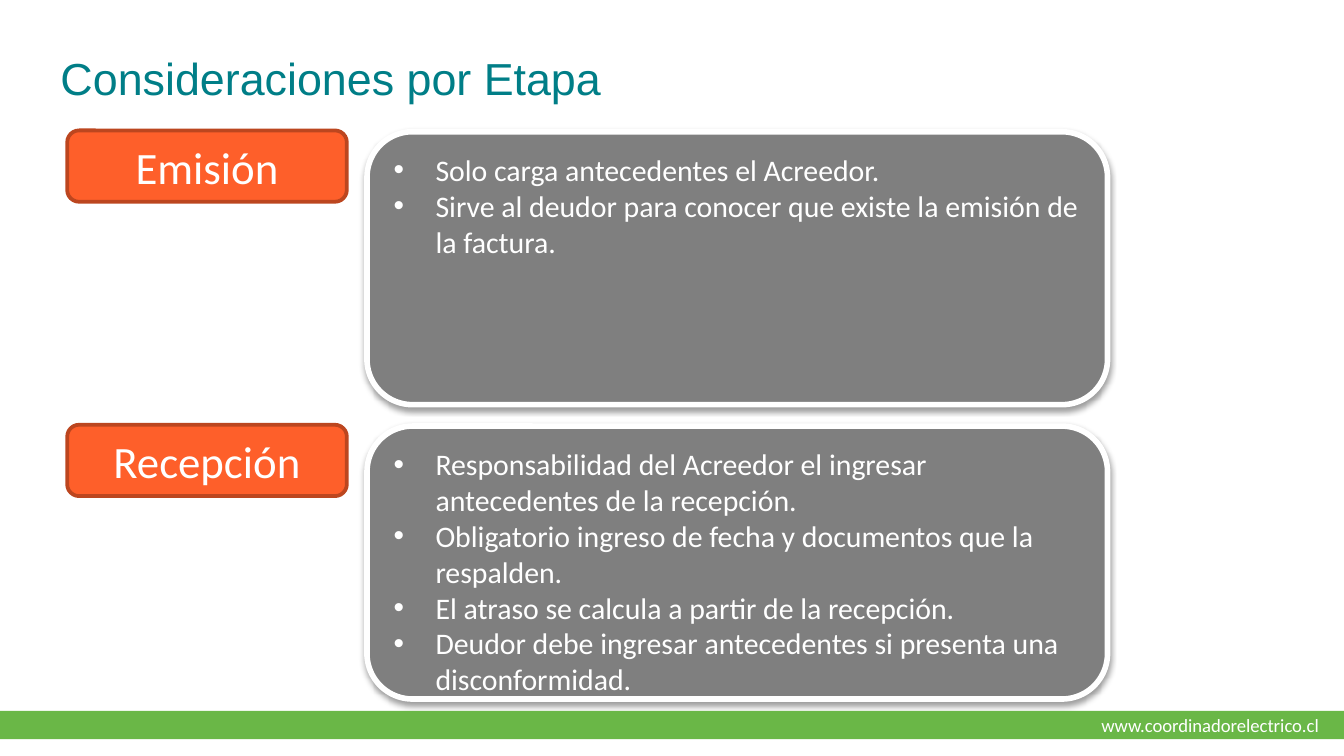
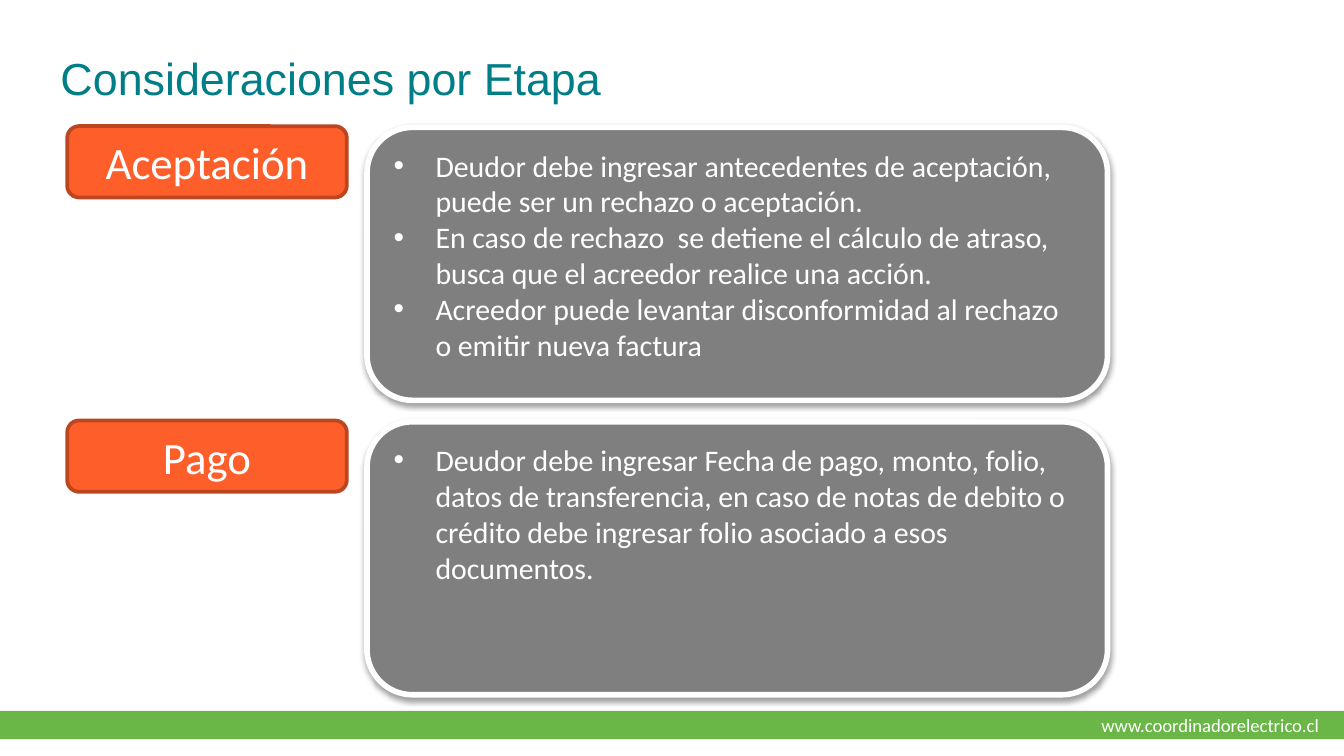
from dataclasses import dataclass

from lxml import etree
from pptx import Presentation
from pptx.dml.color import RGBColor
from pptx.enum.shapes import MSO_SHAPE
from pptx.enum.text import MSO_ANCHOR, PP_ALIGN
from pptx.oxml.ns import qn
from pptx.util import Pt

RECT, ROUNDED = MSO_SHAPE.RECTANGLE, MSO_SHAPE.ROUNDED_RECTANGLE
TOP, MIDDLE = MSO_ANCHOR.TOP, MSO_ANCHOR.MIDDLE
LEFT, CENTER, RIGHT = PP_ALIGN.LEFT, PP_ALIGN.CENTER, PP_ALIGN.RIGHT

# Content
TITLE = "Consideraciones por Etapa"
WEBSITE = "www.coordinadorelectrico.cl"
SLIDES = [
    {"top": 69.9, "stages": [
        ("Emisión", [
            "Solo carga antecedentes el Acreedor.",
            "Sirve al deudor para conocer que existe la emisión de la factura.",
        ]),
        ("Recepción", [
            "Responsabilidad del Acreedor el ingresar antecedentes de la recepción.",
            "Obligatorio ingreso de fecha y documentos que la respalden.",
            "El atraso se calcula a partir de la recepción.",
            "Deudor debe ingresar antecedentes si presenta una disconformidad.",
        ]),
    ]},
    {"top": 67.6, "stages": [
        ("Aceptación", [
            "Deudor debe ingresar antecedentes de aceptación, puede ser un rechazo o aceptación.",
            "En caso de rechazo  se detiene el cálculo de atraso, busca que el acreedor realice una acción.",
            "Acreedor puede levantar disconformidad al rechazo o emitir nueva factura",
        ]),
        ("Pago", [
            "Deudor debe ingresar Fecha de pago, monto, folio, datos de transferencia, "
            "en caso de notas de debito o crédito debe ingresar folio asociado a esos documentos.",
        ]),
    ]},
]


# Theme
@dataclass(frozen=True)
class Theme:
    teal: str = "007E87"
    green: str = "6AB747"
    orange: str = "FE5F2A"
    rust: str = "BC461F"
    gray: str = "7F7F7F"
    white: str = "FFFFFF"
    heading_font: str = "Arial"
    body_font: str = "Calibri"
    heading_size: int = 24
    list_size: int = 16
    footer_size: int = 10


THEME = Theme()

# Layout, in points
SLIDE_WIDTH, SLIDE_HEIGHT = 720, 405
TITLE_BOX = (25.2, 23.8, 668.9, 48.2)
BAND_BOX = (0, 380.9, SLIDE_WIDTH, 15.1)
WEBSITE_BOX = (567.4, 378.7, 146.2, 19.4)
LABEL_LEFT, LABEL_WIDTH, LABEL_HEIGHT = 36, 149.8, 38.2
PANEL_LEFT, PANEL_WIDTH, PANEL_HEIGHT = 196.6, 396.7, 146.2
PANEL_DROP = 0.7
STAGE_PITCH = 157.7
BULLET_INDENT = 22.5


def points(box):
    return [Pt(length) for length in box]


def write(shape, lines, size, color=THEME.white, font=THEME.body_font,
          align=LEFT, anchor=MIDDLE, bulleted=False):
    frame = shape.text_frame
    frame.word_wrap = True
    frame.vertical_anchor = anchor
    frame.text = "\n".join(lines)
    for paragraph in frame.paragraphs:
        paragraph.alignment = align
        if bulleted:
            add_bullet(paragraph)
        paragraph.font.name = font
        paragraph.font.size = Pt(size)
        paragraph.font.color.rgb = RGBColor.from_string(color)


def add_bullet(paragraph):
    properties = paragraph._p.get_or_add_pPr()
    properties.set("marL", str(Pt(BULLET_INDENT)))
    properties.set("indent", str(-Pt(BULLET_INDENT)))
    etree.SubElement(properties, qn("a:buFont"), typeface="Arial")
    etree.SubElement(properties, qn("a:buChar"), char="•")


def add_block(slide, kind, box, fill, line=None, line_width=0):
    block = slide.shapes.add_shape(kind, *points(box))
    block.shadow.inherit = False
    block.fill.solid()
    block.fill.fore_color.rgb = RGBColor.from_string(fill)
    if line:
        block.line.color.rgb = RGBColor.from_string(line)
        block.line.width = Pt(line_width)
    else:
        block.line.fill.background()
    return block


def add_soft_shadow(block):
    effects = block._element.spPr.find(qn("a:effectLst"))
    shadow = etree.SubElement(
        effects, qn("a:outerShdw"), blurRad=str(Pt(3.1)), dist=str(Pt(1.6)),
        dir="5400000", rotWithShape="0")
    color = etree.SubElement(shadow, qn("a:srgbClr"), val="000000")
    etree.SubElement(color, qn("a:alpha"), val="38000")


def add_frame(slide):
    """Footer band, web address and title shared by every slide."""
    add_block(slide, RECT, BAND_BOX, THEME.green)
    website = slide.shapes.add_textbox(*points(WEBSITE_BOX))
    write(website, [WEBSITE], THEME.footer_size, align=RIGHT)
    title = slide.shapes.title
    title.left, title.top, title.width, title.height = points(TITLE_BOX)
    write(title, [TITLE], THEME.heading_size, THEME.teal, THEME.heading_font, anchor=TOP)


def add_stage(slide, top, stage, considerations):
    label = add_block(slide, ROUNDED, (LABEL_LEFT, top, LABEL_WIDTH, LABEL_HEIGHT),
                      THEME.orange, THEME.rust, 2)
    write(label, [stage], THEME.heading_size, align=CENTER)
    panel = add_block(slide, ROUNDED,
                      (PANEL_LEFT, top + PANEL_DROP, PANEL_WIDTH, PANEL_HEIGHT),
                      THEME.gray, THEME.white, 3)
    add_soft_shadow(panel)
    write(panel, considerations, THEME.list_size, anchor=TOP, bulleted=True)


def main():
    deck = Presentation()
    deck.slide_width, deck.slide_height = Pt(SLIDE_WIDTH), Pt(SLIDE_HEIGHT)
    title_only = deck.slide_layouts[5]
    for content in SLIDES:
        slide = deck.slides.add_slide(title_only)
        add_frame(slide)
        for row, (stage, considerations) in enumerate(content["stages"]):
            add_stage(slide, content["top"] + row * STAGE_PITCH, stage, considerations)
    deck.save("out.pptx")


if __name__ == "__main__":
    main()
